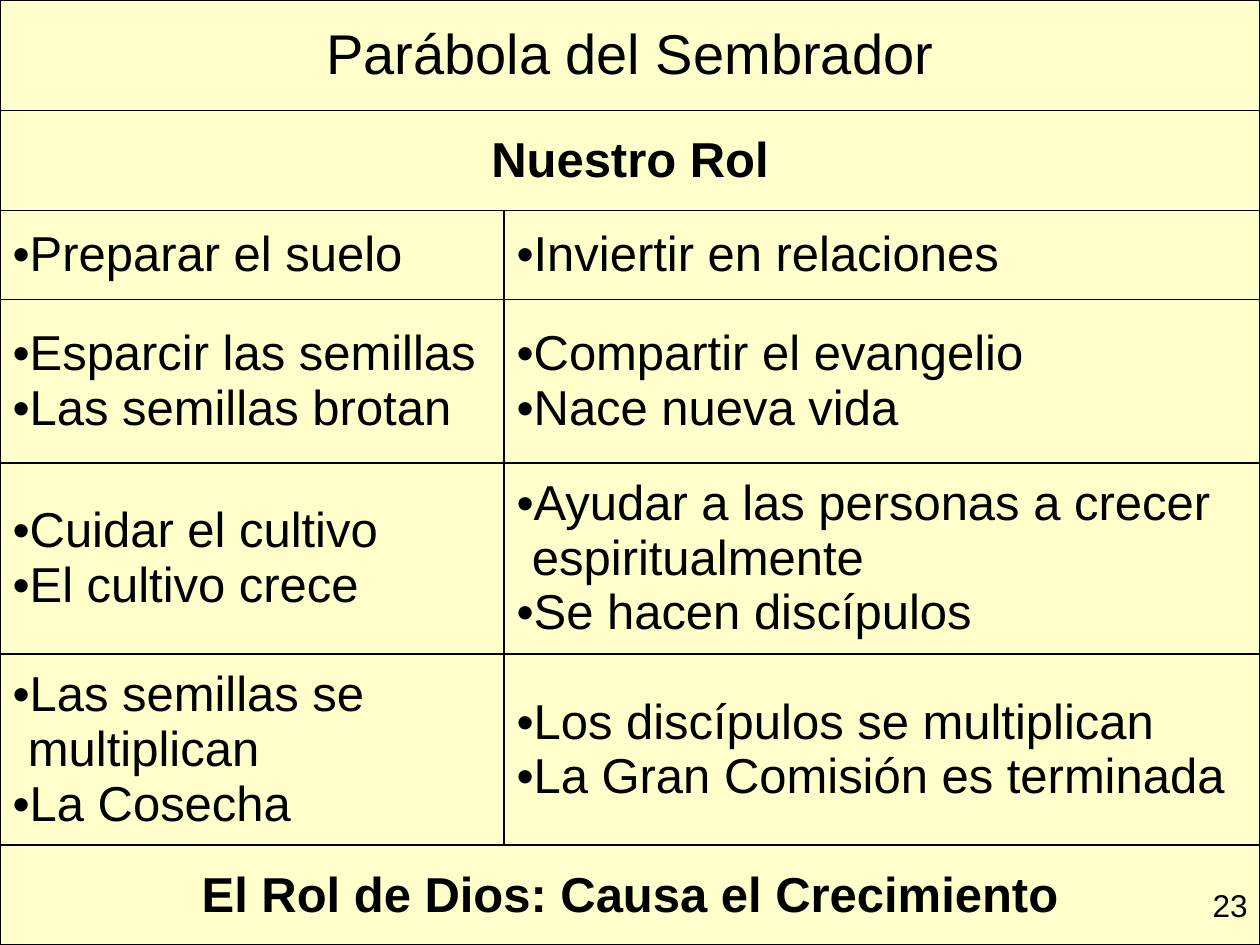
from lxml.etree import SubElement
from pptx import Presentation
from pptx.dml.color import RGBColor
from pptx.enum.text import MSO_ANCHOR as Anchor, PP_ALIGN as Align
from pptx.oxml.ns import qn
from pptx.util import Cm, Pt

BLACK = RGBColor(0x00, 0x00, 0x00)
CREAM = RGBColor(0xFF, 0xFF, 0xCC)
FONT = "Arial"
BULLET_INDENT = Cm(0.31)

COLUMN_WIDTHS = [10.16, 15.24]
ROW_HEIGHTS = [2.23, 2.01, 1.8, 3.29, 3.85, 3.86, 2.01]

# Rows that span both columns: row index, text, size, bold
BANNERS = [
    (0, "Parábola del Sembrador", 32, False),
    (1, "Nuestro Rol", 28, True),
    (6, "El Rol de Dios: Causa el Crecimiento", 28, True),
]
FIRST_STEP_ROW = 2
STEPS = [
    (["Preparar el suelo"], ["Inviertir en relaciones"]),
    (["Esparcir las semillas", "Las semillas brotan"],
     ["Compartir el evangelio", "Nace nueva vida"]),
    (["Cuidar el cultivo", "El cultivo crece"],
     ["Ayudar a las personas a crecer espiritualmente", "Se hacen discípulos"]),
    (["Las semillas se multiplican", "La Cosecha"],
     ["Los discípulos se multiplican", "La Gran Comisión es terminada"]),
]


def add_run(p, text, size, bold=False):
    r = p.add_run()
    r.text = text
    r.font.name = FONT
    r.font.size = Pt(size)
    r.font.bold = bold
    r.font.color.rgb = BLACK


def add_bullet(p):
    pPr = p._p.get_or_add_pPr()
    pPr.set("marL", str(BULLET_INDENT))
    pPr.set("indent", str(-BULLET_INDENT))
    SubElement(pPr, qn("a:buFont"), typeface=FONT)
    SubElement(pPr, qn("a:buChar"), char="•")


def style_cell(cell):
    """Draw the four borders, then fill the cell and centre it vertically."""
    tcPr = cell._tc.get_or_add_tcPr()
    for side in ("a:lnL", "a:lnR", "a:lnT", "a:lnB"):
        ln = SubElement(tcPr, qn(side), w=str(Pt(1)))
        fill = SubElement(ln, qn("a:solidFill"))
        SubElement(fill, qn("a:srgbClr"), val=str(BLACK))
    cell.fill.solid()
    cell.fill.fore_color.rgb = CREAM
    cell.vertical_anchor = Anchor.MIDDLE


def fill_banner(table, row, text, size, bold):
    cell = table.cell(row, 0)
    cell.merge(table.cell(row, 1))
    p = cell.text_frame.paragraphs[0]
    p.alignment = Align.CENTER
    add_run(p, text, size, bold)


def fill_bullets(cell, items):
    tf = cell.text_frame
    for i, item in enumerate(items):
        p = tf.add_paragraph() if i else tf.paragraphs[0]
        add_bullet(p)
        add_run(p, item, 28)


def add_parable_table(s, width, height):
    table = s.shapes.add_table(len(ROW_HEIGHTS), len(COLUMN_WIDTHS),
                               Cm(0), Cm(0), width, height).table
    table.first_row = table.horz_banding = False
    for column, w in zip(table.columns, COLUMN_WIDTHS):
        column.width = Cm(w)
    for row, h in zip(table.rows, ROW_HEIGHTS):
        row.height = Cm(h)
    for cell in table.iter_cells():
        style_cell(cell)
    for banner in BANNERS:
        fill_banner(table, *banner)
    for row, step in enumerate(STEPS, FIRST_STEP_ROW):
        for column, items in enumerate(step):
            fill_bullets(table.cell(row, column), items)


def add_page_number(s, number):
    tf = s.shapes.add_textbox(Cm(19.48), Cm(17.73), Cm(5.92), Cm(1.32)).text_frame
    tf.word_wrap = True
    p = tf.paragraphs[0]
    p.alignment = Align.RIGHT
    add_run(p, number, 18)


def main():
    prs = Presentation()
    prs.slide_width, prs.slide_height = Cm(25.4), Cm(19.05)
    s = prs.slides.add_slide(prs.slide_layouts[6])
    add_parable_table(s, prs.slide_width, prs.slide_height)
    add_page_number(s, "23")
    prs.save("out.pptx")


if __name__ == "__main__":
    main()
